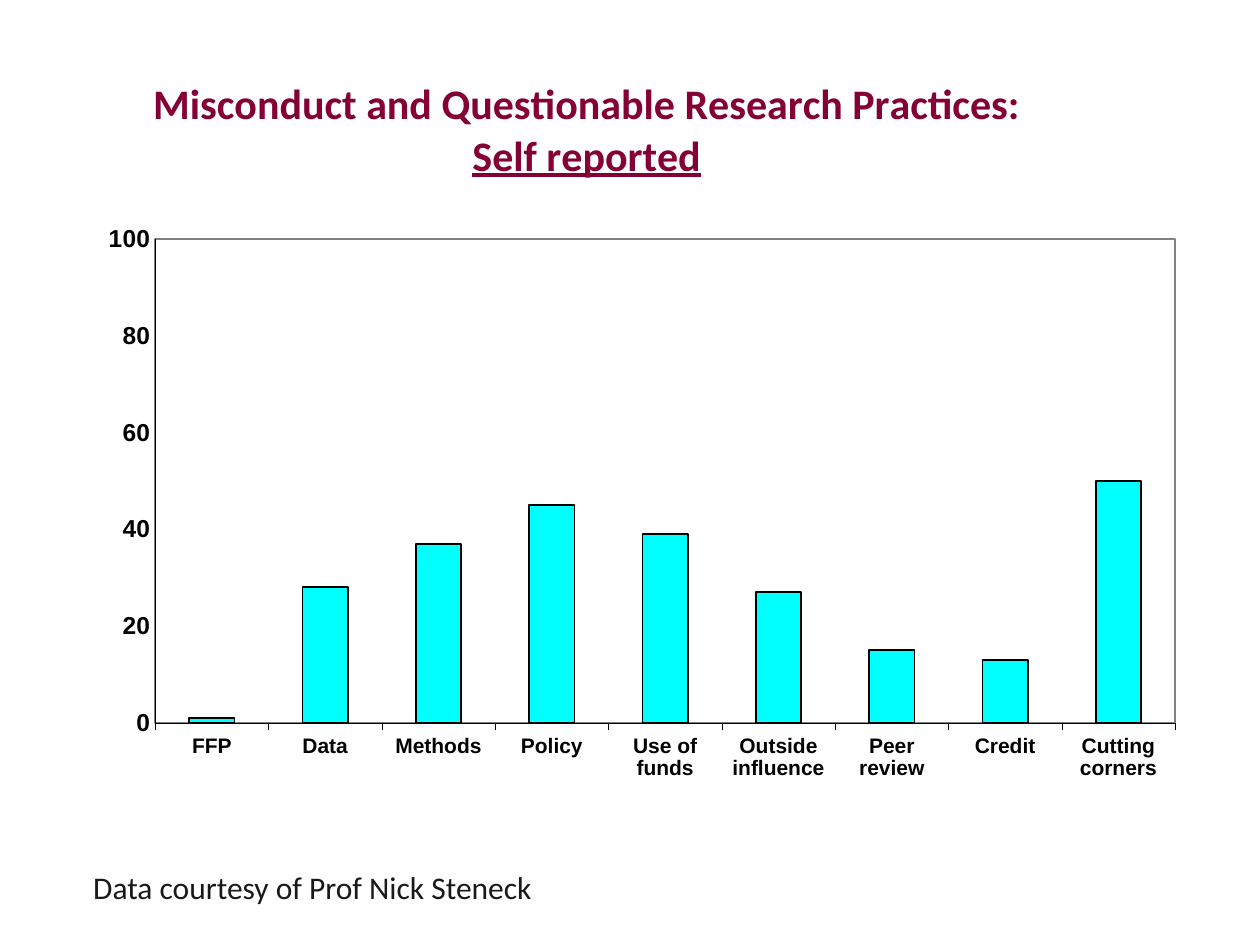
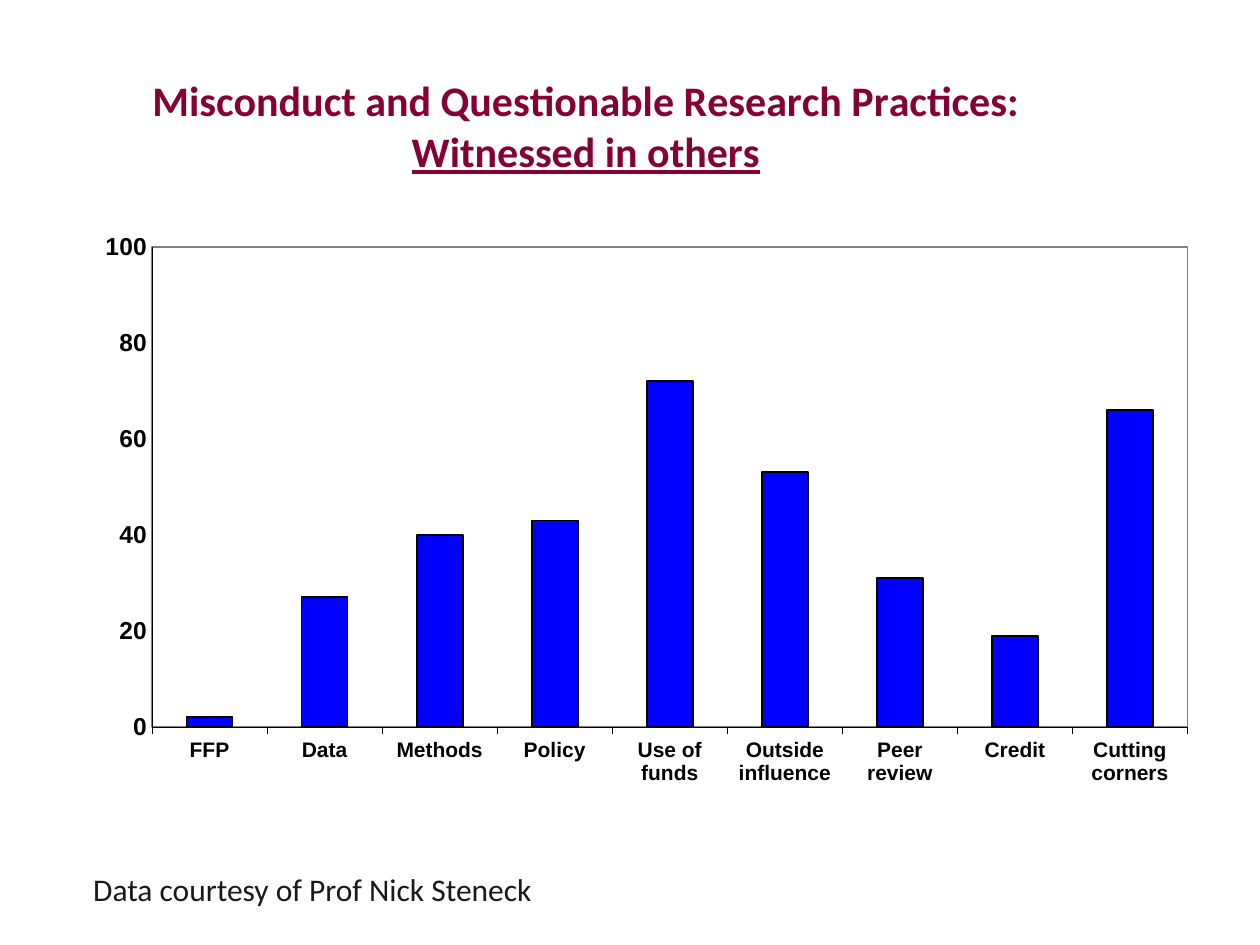
from dataclasses import dataclass

from pptx import Presentation
from pptx.chart.chart import Chart
from pptx.chart.data import CategoryChartData
from pptx.dml.color import RGBColor
from pptx.enum.chart import XL_CHART_TYPE, XL_TICK_MARK
from pptx.oxml import parse_xml
from pptx.oxml.ns import nsdecls, qn
from pptx.slide import Slide
from pptx.util import Cm, Pt

BLACK = RGBColor(0x00, 0x00, 0x00)
WINE = RGBColor(0x85, 0x00, 0x34)
INK = RGBColor(0x19, 0x19, 0x19)
CYAN = RGBColor(0x00, 0xFF, 0xFF)
BLUE = RGBColor(0x00, 0x00, 0xFF)
GREY = RGBColor(0x80, 0x80, 0x80)

HEAD = "Misconduct and Questionable Research Practices:"
CREDIT = "Data courtesy of Prof Nick Steneck"
TOPICS = ("FFP", "Data", "Methods", "Policy", "Use of funds",
          "Outside influence", "Peer review", "Credit", "Cutting corners")
LEFT = Cm(1.37)


@dataclass(frozen=True)
class Survey:
    source: str
    values: tuple[int, ...]
    fill: RGBColor
    top: float
    width: float
    height: float
    plot: tuple[float, float, float, float]
    foot: float


SURVEYS = (
    Survey("Self reported", (1, 28, 37, 45, 39, 27, 15, 13, 50), CYAN,
           1.35, 23.47, 14.58, (0.075, 0.238, 0.876, 0.669), 17.37),
    Survey("Witnessed in others", (2, 27, 40, 43, 72, 53, 31, 19, 66), BLUE,
           1.27, 23.22, 15.11, (0.073, 0.245, 0.899, 0.641), 17.42),
)


def place(part, index: int, box: tuple[float, ...], inner: bool = False) -> None:
    """Give a chart part a fixed place, in fractions of the chart."""
    old = part.find(qn("c:layout"))
    if old is not None:
        part.remove(old)
    target = '<c:layoutTarget val="inner"/>' if inner else ""
    modes = '<c:xMode val="edge"/><c:yMode val="edge"/>'
    sizes = "".join(f'<c:{key} val="{val}"/>' for key, val in zip("xywh", box))
    part.insert(index, parse_xml(
        f'<c:layout {nsdecls("c")}><c:manualLayout>{target}{modes}{sizes}'
        "</c:manualLayout></c:layout>"))


def add_title(chart: Chart, source: str) -> None:
    chart.has_title = True
    title = chart.chart_title
    title.include_in_layout = False
    frame = title.text_frame
    frame.text = f"{HEAD}\n{source}"
    for line in frame.paragraphs:
        font = line.font
        font.name, font.size, font.bold = "Calibri", Pt(24), True
        font.color.rgb = WINE
    frame.paragraphs[1].font.underline = True
    place(title._element, 1, (0.07, 0.01))


def style_axis(axis, size: int, tick: XL_TICK_MARK) -> None:
    axis.has_major_gridlines = False
    axis.major_tick_mark = tick
    axis.minor_tick_mark = XL_TICK_MARK.NONE
    axis.format.line.color.rgb = BLACK
    axis.format.line.width = Pt(0.25)
    font = axis.tick_labels.font
    font.name, font.size, font.bold = "Arial", Pt(size), True
    font.color.rgb = BLACK


def frame_plot(chart: Chart, box: tuple[float, ...]) -> None:
    area = chart._chartSpace.chart.plotArea
    place(area, 0, box, inner=True)
    area.append(parse_xml(
        f'<c:spPr {nsdecls("c", "a")}><a:noFill/><a:ln w="{Pt(1)}"><a:solidFill>'
        f'<a:srgbClr val="{GREY}"/></a:solidFill></a:ln></c:spPr>'))


def add_bars(slide: Slide, survey: Survey) -> None:
    data = CategoryChartData()
    data.categories = TOPICS
    data.add_series("Series 1", survey.values)
    chart = slide.shapes.add_chart(
        XL_CHART_TYPE.COLUMN_CLUSTERED, LEFT, Cm(survey.top),
        Cm(survey.width), Cm(survey.height), data).chart
    chart.has_legend = False
    chart.font.name, chart.font.size = "Arial", Pt(10)
    chart.font.color.rgb = BLACK
    add_title(chart, survey.source)

    style_axis(chart.category_axis, 12, XL_TICK_MARK.OUTSIDE)
    scale = chart.value_axis
    style_axis(scale, 14, XL_TICK_MARK.NONE)
    scale.minimum_scale, scale.maximum_scale = 0, 100
    scale.major_unit = 20

    bars = chart.plots[0]
    bars.gap_width = 150
    bars.vary_by_categories = False
    look = bars.series[0].format
    look.fill.solid()
    look.fill.fore_color.rgb = survey.fill
    look.line.color.rgb = BLACK
    look.line.width = Pt(1)
    frame_plot(chart, survey.plot)


def add_credit(slide: Slide, top: float) -> None:
    box = slide.shapes.add_textbox(Cm(1.63), Cm(top), Cm(9.45), Cm(1.02))
    box.text_frame.word_wrap = False
    line = box.text_frame.paragraphs[0]
    line.text = CREDIT
    line.font.name, line.font.size = "Calibri", Pt(18)
    line.font.color.rgb = INK


def main() -> None:
    deck = Presentation()
    deck.slide_width, deck.slide_height = Cm(25.4), Cm(19.05)
    blank = deck.slide_layouts.get_by_name("Blank")
    for survey in SURVEYS:
        slide = deck.slides.add_slide(blank)
        add_bars(slide, survey)
        add_credit(slide, survey.foot)
    deck.save("out.pptx")


if __name__ == "__main__":
    main()
